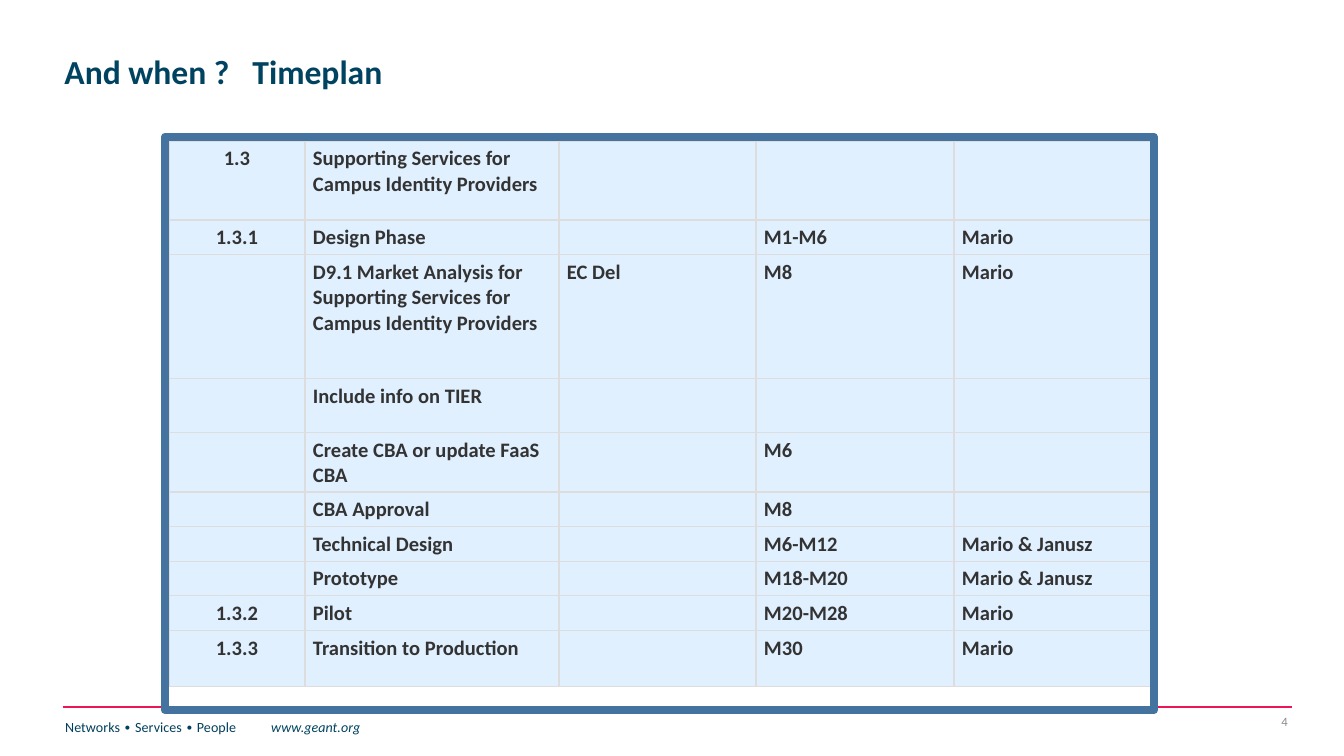
from typing import NamedTuple

from lxml import etree
from pptx import Presentation
from pptx import util as u
from pptx.dml.color import RGBColor
from pptx.enum import shapes, text
from pptx.oxml.ns import qn

EMU_PER_PX = 914400 / 134.4
FONT = "Calibri"
NAVY = RGBColor(0x00, 0x43, 0x61)
FOOTER_NAVY = RGBColor(0x00, 0x3F, 0x5E)
GREY = RGBColor(0x8C, 0x8C, 0x8C)
DARK = RGBColor(0x33, 0x33, 0x33)
PALE_BLUE = RGBColor(0xE0, 0xF0, 0xFF)
FRAME_BLUE = RGBColor(0x43, 0x73, 0x9E)
RED = RGBColor(0xED, 0x15, 0x56)
GRID = "DDDDDD"
CELL_SIZE = 11


class Box(NamedTuple):
    x: int
    y: int
    w: int
    h: int


class Task(NamedTuple):
    height: int
    number: str
    name: str
    kind: str = ""
    months: str = ""
    owner: str = ""


TASKS = [
    Task(79, "1.3", "Supporting Services for Campus Identity Providers"),
    Task(34, "1.3.1", "Design Phase", "", "M1-M6", "Mario"),
    Task(124, "", "D9.1 Market Analysis for Supporting Services for Campus Identity Providers",
         "EC Del", "M8", "Mario"),
    Task(54, "", "Include info on TIER"),
    Task(56, "", "Create CBA or update FaaS CBA", "", "M6"),
    Task(34, "", "CBA Approval", "", "M8"),
    Task(34, "", "Technical Design", "", "M6-M12", "Mario & Janusz"),
    Task(34, "", "Prototype", "", "M18-M20", "Mario & Janusz"),
    Task(34, "1.3.2", "Pilot", "", "M20-M28", "Mario"),
    Task(56, "1.3.3", "Transition to Production", "", "M30", "Mario"),
]
COLUMN_WIDTHS = [136, 254, 197, 198, 197]


def px(n: float) -> int:
    return round(n * EMU_PER_PX)


def emu(box: Box) -> list[int]:
    return [px(n) for n in box]


def set_all(target, values: dict) -> None:
    for name, value in values.items():
        setattr(target, name, value)


def add_run(p, words: str, size: float, color: RGBColor, **style) -> None:
    r = p.add_run()
    r.text = words
    set_all(r.font, {"name": FONT, "size": u.Pt(size), **style})
    r.font.color.rgb = color


def add_tab_stop(p, position: int) -> None:
    tabs = etree.SubElement(p._p.get_or_add_pPr(), qn("a:tabLst"))
    etree.SubElement(tabs, qn("a:tab"), pos=str(px(position)), algn="l")


def add_text_box(s, box: Box, anchor):
    tf = s.shapes.add_textbox(*emu(box)).text_frame
    set_all(tf, {"word_wrap": True, "vertical_anchor": anchor})
    return tf.paragraphs[0]


def add_borders(cell) -> None:
    tcPr = cell._tc.get_or_add_tcPr()
    for i, side in enumerate(("lnL", "lnR", "lnT", "lnB")):
        ln = etree.Element(qn(f"a:{side}"), w=str(u.Pt(0.75)))
        fill = etree.SubElement(ln, qn("a:solidFill"))
        etree.SubElement(fill, qn("a:srgbClr"), val=GRID)
        tcPr.insert(i, ln)


def fill_cell(cell, words: str, align) -> None:
    set_all(cell, {"margin_left": px(8), "margin_right": px(8),
                   "margin_top": px(5), "margin_bottom": px(5)})
    cell.fill.solid()
    cell.fill.fore_color.rgb = PALE_BLUE
    add_borders(cell)
    p = cell.text_frame.paragraphs[0]
    p.alignment = align
    if words:
        add_run(p, words, CELL_SIZE, DARK, bold=True)
    else:  # keeps empty cells from stretching their row
        etree.SubElement(p._p, qn("a:endParaRPr"), sz=str(CELL_SIZE * 100))


def add_timeplan(s, x: int, y: int) -> None:
    box = Box(x, y, sum(COLUMN_WIDTHS), sum(t.height for t in TASKS))
    table = s.shapes.add_table(len(TASKS), len(COLUMN_WIDTHS), *emu(box)).table
    set_all(table, {"first_row": False, "horz_banding": False})
    for column, width in zip(table.columns, COLUMN_WIDTHS):
        column.width = px(width)
    for row, task in zip(table.rows, TASKS):
        row.height = px(task.height)
        for i, (cell, words) in enumerate(zip(row.cells, task[1:])):
            fill_cell(cell, words, text.PP_ALIGN.LEFT if i else text.PP_ALIGN.CENTER)


def main() -> None:
    prs = Presentation()
    set_all(prs, {"slide_width": px(1344), "slide_height": px(756)})
    s = prs.slides.add_slide(prs.slide_layouts[5])

    # Title
    title = s.shapes.title
    set_all(title, dict(zip(("left", "top", "width", "height"), emu(Box(51, 23, 997, 102)))))
    tf = title.text_frame
    set_all(tf, {"word_wrap": True, "auto_size": text.MSO_AUTO_SIZE.NONE,
                 "vertical_anchor": text.MSO_ANCHOR.MIDDLE})
    p = tf.paragraphs[0]
    set_all(p, {"alignment": text.PP_ALIGN.LEFT, "line_spacing": 0.9})
    add_tab_stop(p, 188)
    add_run(p, "And when ?\tTimeplan", 18, NAVY, bold=True)

    # Footer rule, text and slide number
    rule = s.shapes.add_connector(shapes.MSO_CONNECTOR.STRAIGHT,
                                  px(63), px(707), px(1292), px(707))
    rule.line.color.rgb = RED
    rule.line.width = u.Pt(1)
    etree.SubElement(rule._element.spPr, qn("a:effectLst"))

    p = add_text_box(s, Box(52, 712, 458, 47), text.MSO_ANCHOR.TOP)
    add_tab_stop(p, 206)
    add_run(p, "Networks ∙ Services ∙ People\t", 7.5, FOOTER_NAVY)
    add_run(p, "www.geant.org", 7.5, NAVY, italic=True)

    p = add_text_box(s, Box(1219, 706, 82, 31), text.MSO_ANCHOR.MIDDLE)
    p.alignment = text.PP_ALIGN.RIGHT
    add_run(p, "4", 6.8, GREY)

    # Time plan and its frame
    add_timeplan(s, 169, 141)
    frame = s.shapes.add_shape(shapes.MSO_SHAPE.RECTANGLE, *emu(Box(165, 137, 989, 573)))
    frame.shadow.inherit = False
    frame.fill.background()
    frame.line.color.rgb = FRAME_BLUE
    frame.line.width = u.Pt(4.5)

    prs.save("out.pptx")


if __name__ == "__main__":
    main()
